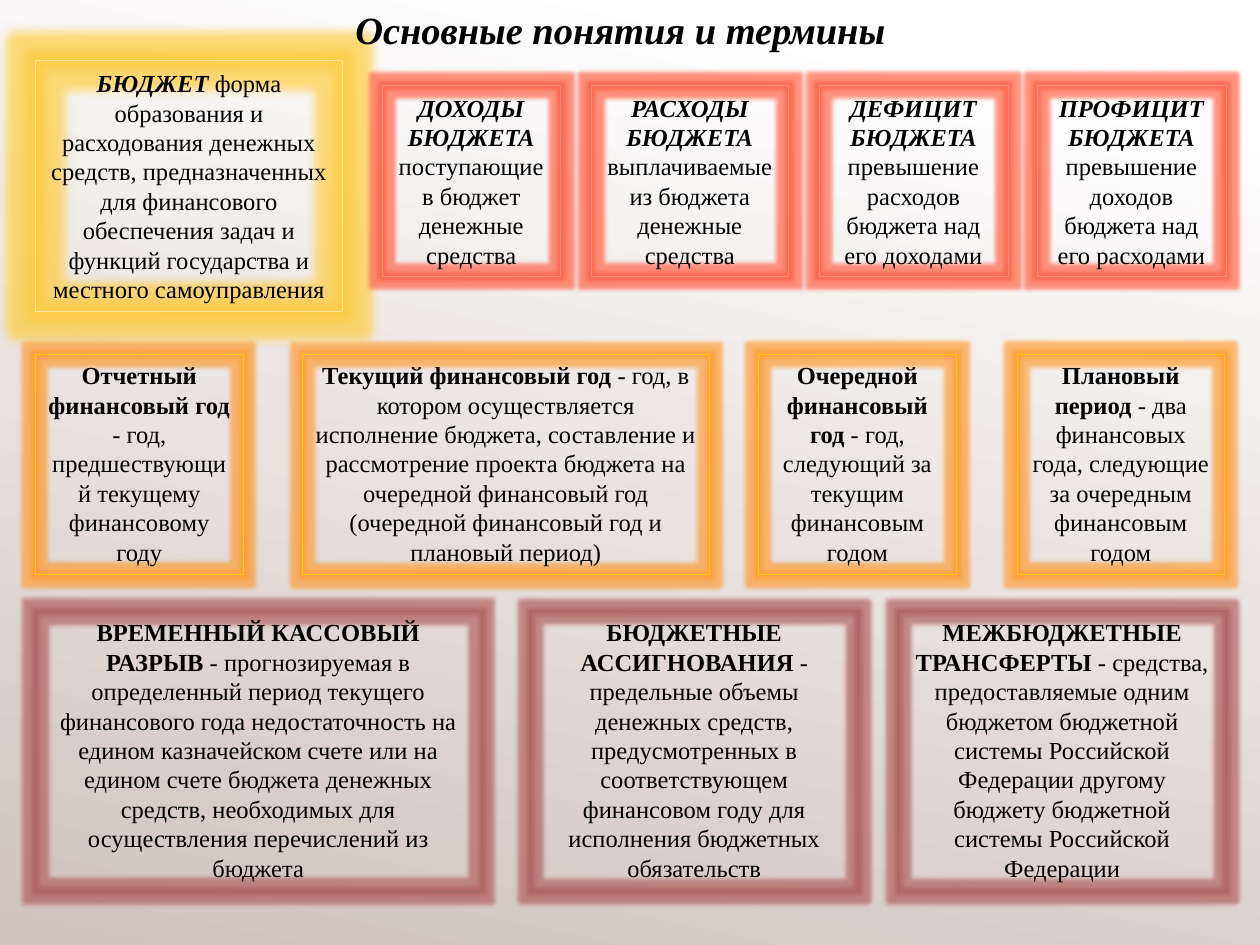
from lxml.etree import SubElement
from pptx import Presentation
from pptx.dml.color import RGBColor
from pptx.enum.shapes import MSO_SHAPE
from pptx.enum.text import MSO_ANCHOR, MSO_AUTO_SIZE, PP_ALIGN
from pptx.oxml.ns import qn
from pptx.util import Inches, Pt


def rgb(code):
    return RGBColor.from_string(code)


class Deck:
    font = "Times New Roman"
    ink = "000000"
    size = 14

    def __init__(self, slide):
        self.slide = slide

    def back(self, stops, angle):
        fill = self.slide.background.fill
        fill.gradient()
        fill.gradient_angle = angle
        for stop, (place, code) in zip(fill.gradient_stops, stops):
            stop.position = place
            stop.color.rgb = rgb(code)

    def style(self, run, size, bold, italic):
        font = run.font
        font.name, font.size = self.font, Pt(size)
        font.bold, font.italic = bold, italic
        font.color.rgb = rgb(self.ink)

    def title(self, text, left, top, width, height):
        """Fill the title and bring it in front of the halos."""
        shape = self.slide.shapes.title
        shape.left, shape.top = Inches(left), Inches(top)
        shape.width, shape.height = Inches(width), Inches(height)
        frame = shape.text_frame
        frame.text = text
        frame.word_wrap = False
        frame.auto_size = MSO_AUTO_SIZE.NONE
        frame.vertical_anchor = MSO_ANCHOR.TOP
        para = frame.paragraphs[0]
        para.alignment = PP_ALIGN.LEFT
        para.line_spacing = 1
        self.style(para.runs[0], 22, True, True)
        self.slide.shapes._spTree.append(shape._element)

    def glow(self, shape, code, size):
        """Put a soft halo of the given size in points round the shape."""
        shape.shadow.inherit = False
        effects = shape._element.spPr.find(qn("a:effectLst"))
        halo = SubElement(effects, qn("a:glow"), rad=str(Pt(size)))
        tint = SubElement(halo, qn("a:srgbClr"), val=code)
        SubElement(tint, qn("a:alpha"), val="65000")

    def box(self, area, look, term, rest):
        line, halo, size, anchor, italic = look
        shape = self.slide.shapes.add_shape(
            MSO_SHAPE.RECTANGLE, *[Inches(n) for n in area])
        shape.fill.background()
        shape.line.color.rgb = rgb(line)
        shape.line.width = Pt(0.25)
        self.glow(shape, halo, size)
        frame = shape.text_frame
        frame.word_wrap = True
        frame.vertical_anchor = anchor
        para = frame.paragraphs[0]
        para.text = term
        para.alignment = PP_ALIGN.CENTER
        para.add_run().text = rest
        for run, bold in zip(para.runs, (True, False)):
            self.style(run, self.size, bold, bold and italic)

    def row(self, top, height, look, items):
        for left, width, term, rest in items:
            self.box((left, top, width, height), look, term, rest)


GOLD = ("FFEA9C", "FFC933", 11, MSO_ANCHOR.MIDDLE, True)
RED = ("F0917B", "FF5A3C", 5, MSO_ANCHOR.MIDDLE, True)
AMBER = ("FFCA08", "FF9A2E", 5, MSO_ANCHOR.TOP, False)
ROSE = ("9C6A6A", "B05A5A", 5, MSO_ANCHOR.TOP, False)

BUDGET = [
    (0.28, 2.44, "БЮДЖЕТ ",
     "форма образования и расходования денежных средств, предназначенных "
     "для финансового обеспечения задач и функций государства и местного "
     "самоуправления"),
]
FLOWS = [
    (3.03, 1.42, "ДОХОДЫ БЮДЖЕТА ", "поступающие в бюджет денежные средства"),
    (4.69, 1.57, "РАСХОДЫ БЮДЖЕТА ",
     "выплачиваемые из бюджета денежные средства"),
    (6.5, 1.5, "ДЕФИЦИТ БЮДЖЕТА ",
     "превышение расходов бюджета над его доходами"),
    (8.23, 1.5, "ПРОФИЦИТ БЮДЖЕТА ",
     "превышение доходов бюджета над его расходами"),
]
YEARS = [
    (0.28, 1.65, "Отчетный финансовый год",
     " - год, предшествующий текущему финансовому году"),
    (2.4, 3.23, "Текущий финансовый год",
     " - год, в котором осуществляется исполнение бюджета, составление и "
     "рассмотрение проекта бюджета на очередной финансовый год (очередной "
     "финансовый год и плановый период)"),
    (6.02, 1.57, "Очередной финансовый год",
     " - год, следующий за текущим финансовым годом"),
    (8.07, 1.65, "Плановый период",
     " - два финансовых года, следующие за очередным финансовым годом"),
]
FUNDS = [
    (0.28, 3.54, "ВРЕМЕННЫЙ КАССОВЫЙ РАЗРЫВ",
     " - прогнозируемая в определенный период текущего финансового года "
     "недостаточность на едином казначейском счете или на едином счете "
     "бюджета денежных средств, необходимых для осуществления перечислений "
     "из бюджета"),
    (4.21, 2.6, "БЮДЖЕТНЫЕ АССИГНОВАНИЯ",
     " - предельные объемы денежных средств, предусмотренных в "
     "соответствующем финансовом году для исполнения бюджетных "
     "обязательств"),
    (7.13, 2.6, "МЕЖБЮДЖЕТНЫЕ ТРАНСФЕРТЫ",
     " - средства, предоставляемые одним бюджетом бюджетной системы "
     "Российской Федерации другому бюджету бюджетной системы Российской "
     "Федерации"),
]


def main():
    prs = Presentation()
    prs.slide_width, prs.slide_height = Inches(10), Inches(7.5)
    deck = Deck(prs.slides.add_slide(prs.slide_layouts[5]))
    deck.back([(0.1, "FFFFFF"), (1, "D0C2BC")], 258)
    deck.row(4.85, 2.22, ROSE, FUNDS)
    deck.row(2.81, 1.75, AMBER, YEARS)
    deck.row(0.48, 1.99, GOLD, BUDGET)
    deck.row(0.68, 1.51, RED, FLOWS)
    deck.title("Основные понятия и термины", 2.72, 0, 4.57, 0.47)
    prs.save("out.pptx")


if __name__ == "__main__":
    main()
